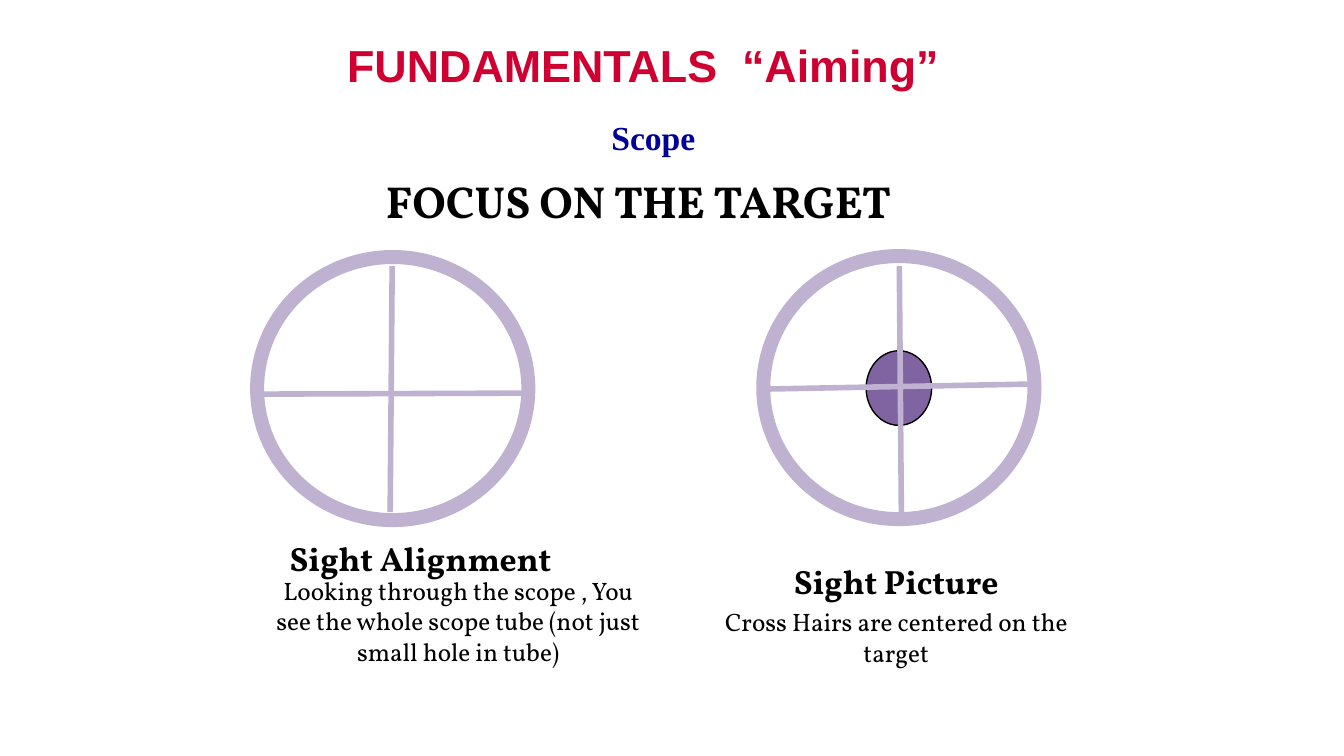
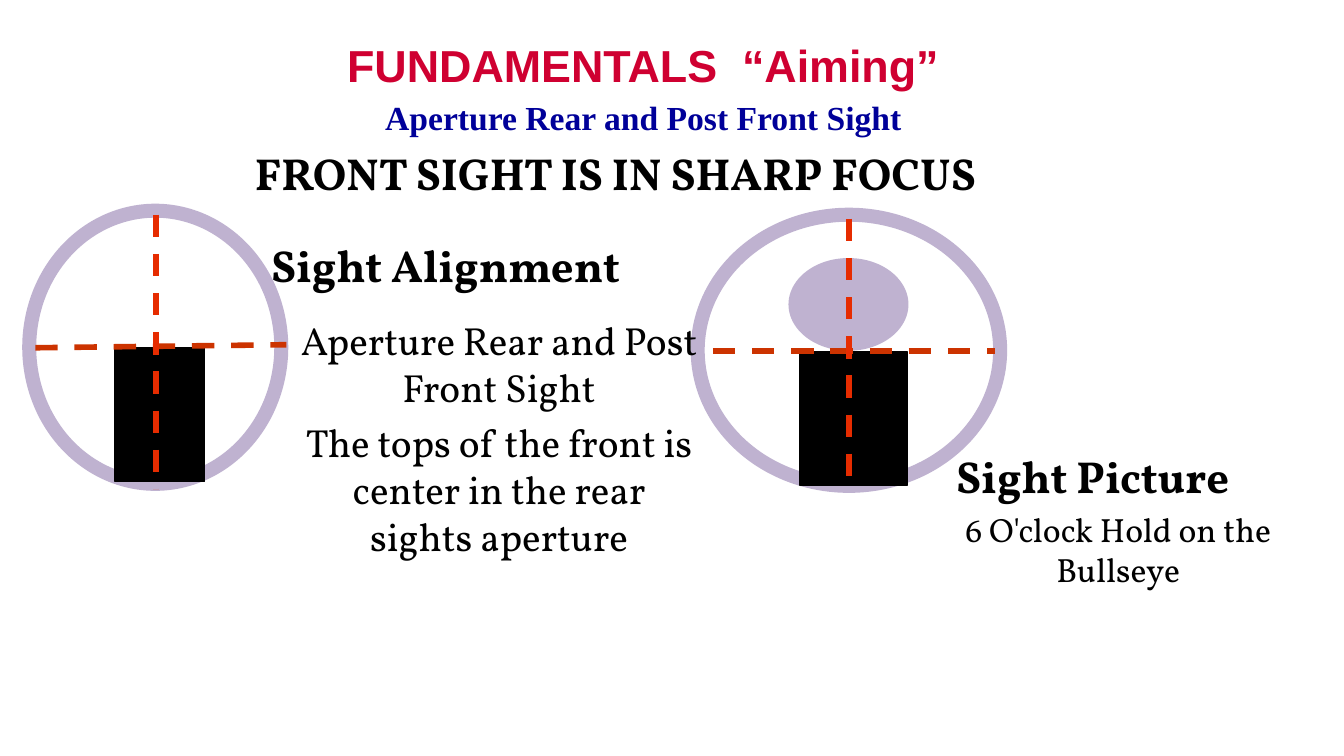
from dataclasses import dataclass

from lxml.etree import SubElement
from pptx import Presentation
from pptx.dml.color import RGBColor
from pptx.enum.dml import MSO_LINE
from pptx.enum.shapes import MSO_CONNECTOR, MSO_SHAPE
from pptx.enum.text import MSO_ANCHOR, MSO_AUTO_SIZE, PP_ALIGN
from pptx.oxml.ns import qn
from pptx.util import Pt

EMU_PER_PX = 9144  # 100 px to the inch
SLIDE_SIZE = (1333, 750)
BLANK_LAYOUT = 6

WHITE = RGBColor(0xFF, 0xFF, 0xFF)
BLACK = RGBColor(0x00, 0x00, 0x00)
CRIMSON = RGBColor(0xCF, 0x00, 0x31)
NAVY = RGBColor(0x00, 0x00, 0x99)
LILAC = RGBColor(0xBF, 0xB2, 0xD0)
PURPLE = RGBColor(0x80, 0x64, 0xA2)
RUST = RGBColor(0xCC, 0x33, 0x00)
ORANGE = RGBColor(0xE6, 0x2C, 0x00)

TITLE_FONT = "Arial"
SUBTITLE_FONT = "Times New Roman"
BODY_FONT = "Vollkorn"
TITLE = "FUNDAMENTALS  “Aiming”"
TITLE_BOX = (217, 4, 842, 121)


def px(length):
    return length * EMU_PER_PX


@dataclass
class Line:
    """One paragraph; indent is its left margin in px."""
    text: str
    size: int
    bold: bool = False
    indent: int = 0
    font: str = BODY_FONT
    color: RGBColor = BLACK


class AimingDeck:
    def __init__(self):
        self.presentation = Presentation()
        self.presentation.slide_width, self.presentation.slide_height = map(px, SLIDE_SIZE)
        self.slide = None

    def new_slide(self, subtitle, subtitle_box):
        layout = self.presentation.slide_layouts[BLANK_LAYOUT]
        self.slide = self.presentation.slides.add_slide(layout)
        title = self.text(TITLE_BOX, Line(TITLE, 32, True, font=TITLE_FONT, color=CRIMSON))
        title.auto_size = MSO_AUTO_SIZE.NONE
        title.vertical_anchor = MSO_ANCHOR.MIDDLE
        self.text(subtitle_box, Line(subtitle, 24, True, font=SUBTITLE_FONT, color=NAVY))

    def text(self, box, *lines, align=PP_ALIGN.CENTER):
        text_frame = self.slide.shapes.add_textbox(*map(px, box)).text_frame
        text_frame.word_wrap = True
        text_frame.auto_size = MSO_AUTO_SIZE.SHAPE_TO_FIT_TEXT
        text_frame.text = "\n".join(line.text for line in lines)
        for index, (paragraph, line) in enumerate(zip(text_frame.paragraphs, lines)):
            paragraph.alignment = align
            if index:
                paragraph.space_before = Pt(line.size * 0.2)
            if line.indent:
                paragraph._p.get_or_add_pPr().set("marL", str(px(line.indent)))
            font = paragraph.runs[0].font
            font.name, font.size, font.bold = line.font, Pt(line.size), line.bold
            font.color.rgb = line.color
        return text_frame

    def shape(self, kind, box, fill, outline=None, width=1):
        shape = self.slide.shapes.add_shape(kind, *map(px, box))
        shape.shadow.inherit = False
        shape.fill.solid()
        shape.fill.fore_color.rgb = fill
        if outline is None:
            shape.line.fill.background()
        else:
            shape.line.color.rgb = outline
            shape.line.width = Pt(width)

    def ring(self, box):
        self.shape(MSO_SHAPE.OVAL, box, WHITE, LILAC, 10)

    def post(self, box):
        self.shape(MSO_SHAPE.RECTANGLE, box, BLACK, BLACK)

    def hair(self, ends, color=LILAC, dashed=False):
        connector = self.slide.shapes.add_connector(MSO_CONNECTOR.STRAIGHT, *map(px, ends))
        connector.line.color.rgb = color
        connector.line.width = Pt(4)
        if dashed:
            connector.line.dash_style = MSO_LINE.DASH
        SubElement(connector._element.spPr, qn("a:effectLst"))

    def scope(self, ring_box, across, upright, target_box=None):
        self.ring(ring_box)
        if target_box:
            self.shape(MSO_SHAPE.OVAL, target_box, PURPLE, BLACK)
        self.hair(across)
        self.hair(upright)

    def aperture(self, ring_box, post_box, across, upright, bullseye_box=None):
        self.ring(ring_box)
        if bullseye_box:
            self.shape(MSO_SHAPE.OVAL, bullseye_box, LILAC)
        self.post(post_box)
        self.hair(across, RUST, dashed=True)
        self.hair(upright, ORANGE, dashed=True)


def add_scope_slide(deck):
    deck.new_slide("Scope", (232, 111, 832, 50))
    deck.text((204, 167, 859, 64), Line("FOCUS ON THE TARGET", 32, True))
    deck.text((242, 529, 331, 50), Line("Sight Alignment", 24, True, 19))
    deck.text((656, 552, 416, 117),
              Line("Sight Picture", 24, True, 50),
              Line("Cross Hairs are centered on the target", 18, indent=50))
    deck.text((208, 566, 443, 104),
              Line("Looking through the scope , You see the whole scope tube "
                   "(not just small hole in tube)", 18, indent=50))
    deck.scope((757, 254, 269, 261), (759, 386, 1024, 381), (894, 508, 892, 264),
               target_box=(859, 348, 65, 74))
    deck.scope((255, 255, 269, 261), (260, 391, 518, 390), (387, 508, 389, 264))


def add_aperture_slide(deck):
    deck.new_slide("Aperture Rear and Post Front Sight", (222, 91, 832, 50))
    deck.text((243, 140, 859, 64), Line("FRONT SIGHT IS IN SHARP FOCUS", 32, True),
              align=PP_ALIGN.LEFT)
    deck.text((243, 231, 398, 64), Line("Sight Alignment", 32, True))
    deck.text((842, 440, 484, 189),
              Line("Sight Picture", 32, True),
              Line("6 O'clock Hold on the Bullseye", 24, indent=50))
    deck.aperture((692, 213, 300, 269), (793, 349, 107, 132),
                  (707, 348, 987, 348), (842, 217, 842, 487),
                  bullseye_box=(782, 256, 119, 92))
    deck.text((238, 309, 464, 255),
              Line("Aperture Rear and Post Front Sight", 28, indent=50),
              Line("The tops of the front is center in the rear sights aperture", 28, indent=50))
    deck.aperture((29, 209, 250, 271), (114, 345, 89, 133),
                  (35, 345, 284, 342), (155, 213, 155, 485))


def main():
    deck = AimingDeck()
    add_scope_slide(deck)
    add_aperture_slide(deck)
    deck.presentation.save("out.pptx")


if __name__ == "__main__":
    main()
